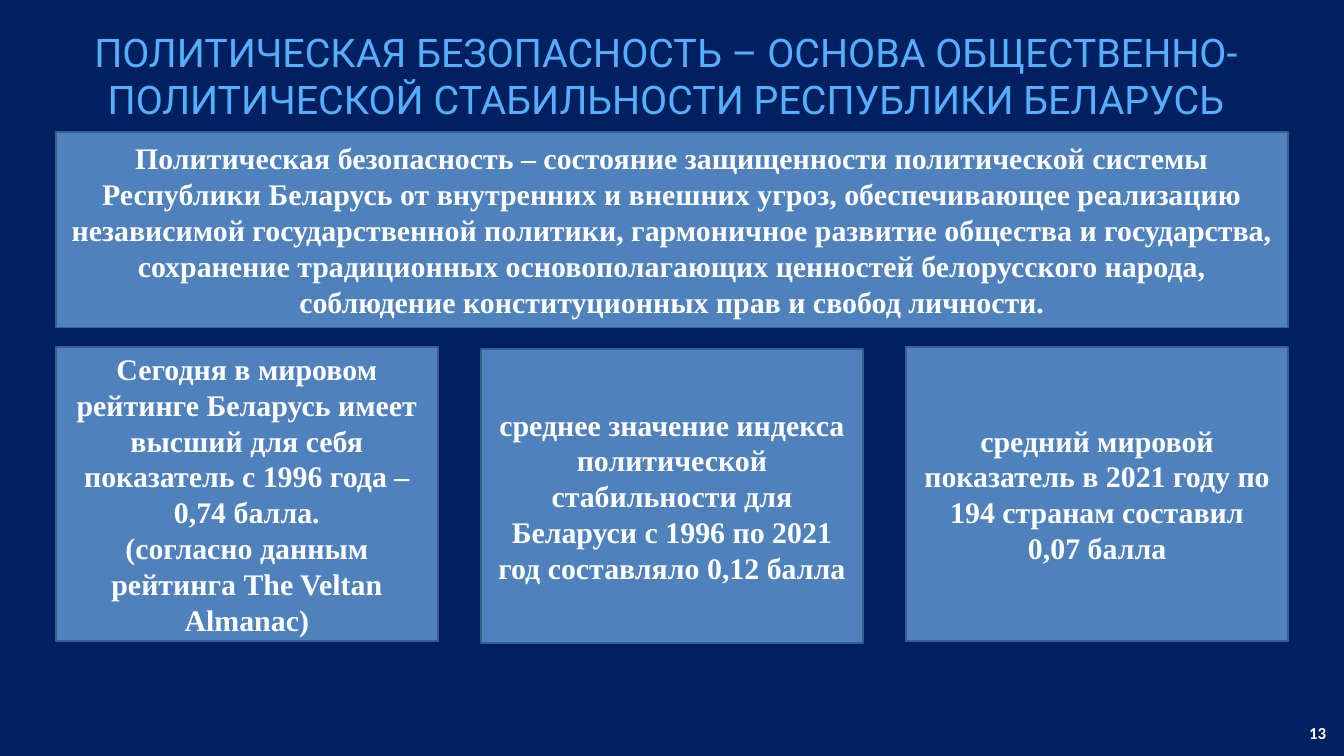
from pptx import Presentation
from pptx.dml.color import RGBColor
from pptx.enum.shapes import MSO_SHAPE as Shape
from pptx.enum.text import MSO_ANCHOR as Anchor, PP_ALIGN as Align
from pptx.util import Pt

TITLE = "ПОЛИТИЧЕСКАЯ БЕЗОПАСНОСТЬ – ОСНОВА ОБЩЕСТВЕННО-ПОЛИТИЧЕСКОЙ СТАБИЛЬНОСТИ РЕСПУБЛИКИ БЕЛАРУСЬ"
THESIS = (
    "Политическая безопасность – состояние защищенности политической системы "
    "Республики Беларусь от внутренних и внешних угроз, обеспечивающее реализацию "
    "независимой государственной политики, гармоничное развитие общества и государства, "
    "сохранение традиционных основополагающих ценностей белорусского народа, "
    "соблюдение конституционных прав и свобод личности."
)
FACTS = [
    ("Сегодня в мировом рейтинге Беларусь имеет высший для себя показатель с 1996 года – "
     "0,74 балла.\n(согласно данным рейтинга The Veltan Almanac)", 0),
    ("среднее значение индекса политической стабильности для Беларуси с 1996 по 2021 год "
     "составляло 0,12 балла", 2),
    ("средний мировой показатель в 2021 году по 194 странам составил\n0,07 балла", 0),
]


def color(code):
    return RGBColor.from_string(code)


def write(frame, text, font, size, tint="FFFFFF", bold=True, align=Align.CENTER):
    frame.word_wrap = True
    para = frame.paragraphs[0]
    para.text = text
    para.alignment = align
    for run in para.runs:
        run.font.name = font
        run.font.size = Pt(size)
        run.font.bold = bold
        run.font.color.rgb = color(tint)
    return para


def add_title(slide, left, top, width, height):
    box = slide.shapes.add_textbox(Pt(left), Pt(top), Pt(width), Pt(height))
    frame = box.text_frame
    frame.margin_left = frame.margin_right = frame.margin_top = frame.margin_bottom = 0
    para = write(frame, TITLE, "Roboto", 42.2, "56AEFF", False)
    para.line_spacing = Pt(50.6)


def add_panel(slide, text, left, top, width, height):
    panel = slide.shapes.add_shape(Shape.RECTANGLE, Pt(left), Pt(top), Pt(width), Pt(height))
    panel.shadow.inherit = False
    panel.fill.solid()
    panel.fill.fore_color.rgb = color("4F81BD")
    panel.line.color.rgb = color("3A5F8C")
    panel.line.width = Pt(2)
    panel.text_frame.vertical_anchor = Anchor.MIDDLE
    write(panel.text_frame, text, "Times New Roman", 32)


def add_facts(slide, left, top, width, height):
    wide = 409
    step = (width - wide) / (len(FACTS) - 1)
    for index, (text, drop) in enumerate(FACTS):
        add_panel(slide, text, left + index * step, top + drop, wide, height)


def add_number(slide, left, top, width, height):
    box = slide.shapes.add_textbox(Pt(left), Pt(top), Pt(width), Pt(height))
    box.text_frame.vertical_anchor = Anchor.MIDDLE
    write(box.text_frame, "13", "Calibri", 18, align=Align.RIGHT)


def main():
    deck = Presentation()
    deck.slide_width, deck.slide_height = Pt(1440), Pt(810)
    slide = deck.slides.add_slide(deck.slide_layouts[6])
    slide.background.fill.solid()
    slide.background.fill.fore_color.rgb = color("002060")
    add_number(slide, 1260, 771, 168, 29)
    add_title(slide, 0, 30, 1428, 102)
    add_panel(slide, THESIS, 60, 141, 1320, 210)
    add_facts(slide, 60, 372, 1320, 314.6)
    deck.save("out.pptx")


if __name__ == "__main__":
    main()
